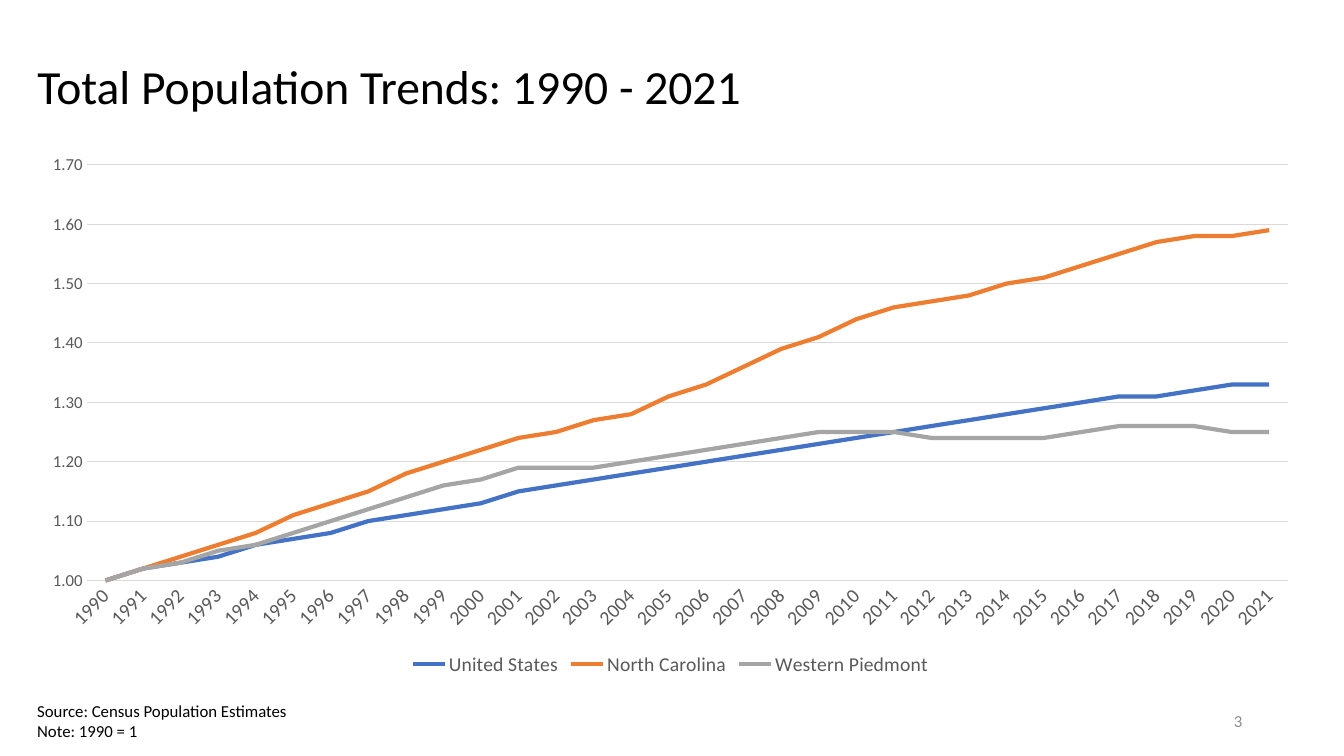
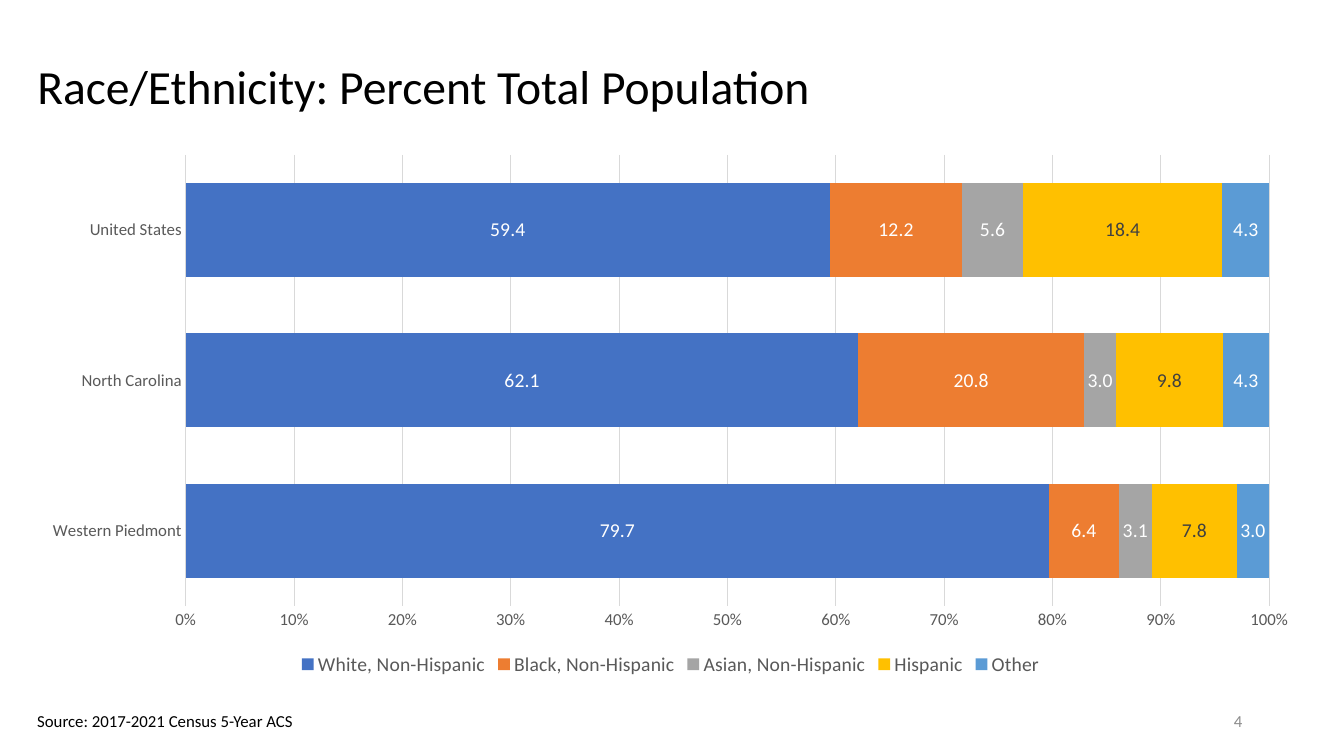
from pptx import Presentation
from pptx.chart.data import CategoryChartData as Data
from pptx.dml.color import RGBColor
from pptx.enum.chart import XL_CHART_TYPE as Kind, XL_LEGEND_POSITION as Place, XL_TICK_MARK as Tick
from pptx.enum.text import MSO_ANCHOR as Anchor, MSO_AUTO_SIZE as Auto, PP_ALIGN as Align
from pptx.util import Inches, Pt

# Content
TREND = [
    ("United States", "4472C4",
     [1, 1.02, 1.03, 1.04, 1.06, 1.07, 1.08, 1.1, 1.11, 1.12, 1.13, 1.15, 1.16, 1.17, 1.18, 1.19,
      1.2, 1.21, 1.22, 1.23, 1.24, 1.25, 1.26, 1.27, 1.28, 1.29, 1.3, 1.31, 1.31, 1.32, 1.33, 1.33]),
    ("North Carolina", "ED7D31",
     [1, 1.02, 1.04, 1.06, 1.08, 1.11, 1.13, 1.15, 1.18, 1.2, 1.22, 1.24, 1.25, 1.27, 1.28, 1.31,
      1.33, 1.36, 1.39, 1.41, 1.44, 1.46, 1.47, 1.48, 1.5, 1.51, 1.53, 1.55, 1.57, 1.58, 1.58, 1.59]),
    ("Western Piedmont", "A5A5A5",
     [1, 1.02, 1.03, 1.05, 1.06, 1.08, 1.1, 1.12, 1.14, 1.16, 1.17, 1.19, 1.19, 1.19, 1.2, 1.21,
      1.22, 1.23, 1.24, 1.25, 1.25, 1.25, 1.24, 1.24, 1.24, 1.24, 1.25, 1.26, 1.26, 1.26, 1.25, 1.25]),
]
RACE = [
    ("White, Non-Hispanic", "4472C4", [79.7, 62.1, 59.4]),
    ("Black, Non-Hispanic", "ED7D31", [6.4, 20.8, 12.2]),
    ("Asian, Non-Hispanic", "A5A5A5", [3.1, 3, 5.6]),
    ("Hispanic", "FFC000", [7.8, 9.8, 18.4]),
    ("Other", "5B9BD5", [3, 4.3, 4.3]),
]
YEARS = [str(year) for year in range(1990, 2022)]
AREAS = ["Western Piedmont", "North Carolina", "United States"]

# Shared look
FACE, INK, GREY, RULE, PALE = "Calibri", "000000", "595959", "D9D9D9", "8C8C8C"
LEFT, WIDE = 0.27, 12.76
HEAD = (LEFT, 0.34, WIDE, 1.09)
PLOT = (LEFT, 1.43, WIDE, 5.32)
PAGE = (9.42, 6.95, 3, 0.4)


def tint(code):
    return RGBColor.from_string(code)


def apply(item, **values):
    for name, value in values.items():
        setattr(item, name, value)


def style(font, size, color=INK):
    apply(font, name=FACE, size=Pt(size))
    font.color.rgb = tint(color)


def stroke(line, color, width):
    line.color.rgb = tint(color)
    line.width = Pt(width)


def note(slide, box, lines, color=INK, **looks):
    frame = slide.shapes.add_textbox(*map(Inches, box)).text_frame
    apply(frame, **looks)
    frame.text = "\n".join(lines)
    for para in frame.paragraphs:
        style(para.font, 12, color)
    return frame


def page(deck, title, number, source, box):
    slide = deck.slides.add_slide(deck.slide_layouts[5])
    head = slide.shapes.title
    apply(head, **dict(zip(("left", "top", "width", "height"), map(Inches, HEAD))))
    frame = head.text_frame
    apply(frame, text=title, vertical_anchor=Anchor.MIDDLE, word_wrap=True)
    para = frame.paragraphs[0]
    apply(para, alignment=Align.LEFT, line_spacing=0.9)
    style(para.font, 34)
    count = note(slide, PAGE, [str(number)], PALE, vertical_anchor=Anchor.MIDDLE, word_wrap=True)
    count.paragraphs[0].alignment = Align.RIGHT
    note(slide, box, source, word_wrap=False, auto_size=Auto.SHAPE_TO_FIT_TEXT)
    return slide


def graph(slide, kind, cats, rows, size, form):
    data = Data(number_format="0.00" if kind == Kind.LINE else "#,##0.0")
    data.categories = cats
    for name, _, values in rows:
        data.add_series(name, values)
    chart = slide.shapes.add_chart(kind, *map(Inches, PLOT), data).chart
    style(chart.font, 10)
    apply(chart, has_title=False, has_legend=True)
    apply(chart.legend, position=Place.BOTTOM, include_in_layout=False)
    style(chart.legend.font, 14, GREY)

    # Axes
    base, scale = chart.category_axis, chart.value_axis
    for axis, points in ((base, size), (scale, 12)):
        apply(axis, major_tick_mark=Tick.NONE, minor_tick_mark=Tick.NONE)
        style(axis.tick_labels.font, points, GREY)
    base.has_major_gridlines = False
    stroke(base.format.line, RULE, 0.75)
    scale.has_major_gridlines = True
    stroke(scale.major_gridlines.format.line, RULE, 0.75)
    scale.format.line.fill.background()
    apply(scale.tick_labels, number_format=form, number_format_is_linked=False)
    chart.plots[0].vary_by_categories = False
    return chart


def trend(slide):
    chart = graph(slide, Kind.LINE, YEARS, TREND, 14, "0.00")
    apply(chart.value_axis, minimum_scale=1, maximum_scale=1.7, major_unit=0.1)
    # Slanted year labels
    chart.category_axis.tick_labels.font
    chart.category_axis._element.txPr.bodyPr.set("rot", "-2700000")
    for series, (_, color, _) in zip(chart.series, TREND):
        series.smooth = False
        stroke(series.format.line, color, 3)


def race(slide):
    chart = graph(slide, Kind.BAR_STACKED_100, AREAS, RACE, 12, "0%")
    apply(chart.plots[0], gap_width=60, overlap=100)
    for series, (name, color, _) in zip(chart.series, RACE):
        series.format.fill.solid()
        series.format.fill.fore_color.rgb = tint(color)
        tags = series.data_labels
        apply(tags, show_value=True, number_format="#,##0.0", number_format_is_linked=False)
        style(tags.font, 14, "404040" if name == "Hispanic" else "FFFFFF")


def main():
    deck = Presentation()
    apply(deck, slide_width=Inches(13.33), slide_height=Inches(7.5))
    trend(page(deck, "Total Population Trends: 1990 - 2021", 3,
               ["Source: Census Population Estimates", "Note: 1990 = 1"], (LEFT, 6.9, 2.71, 0.5)))
    race(page(deck, "Race/Ethnicity: Percent Total Population", 4,
              ["Source: 2017-2021 Census 5-Year ACS"], (LEFT, 7, 2.78, 0.3)))
    deck.save("out.pptx")


if __name__ == "__main__":
    main()
